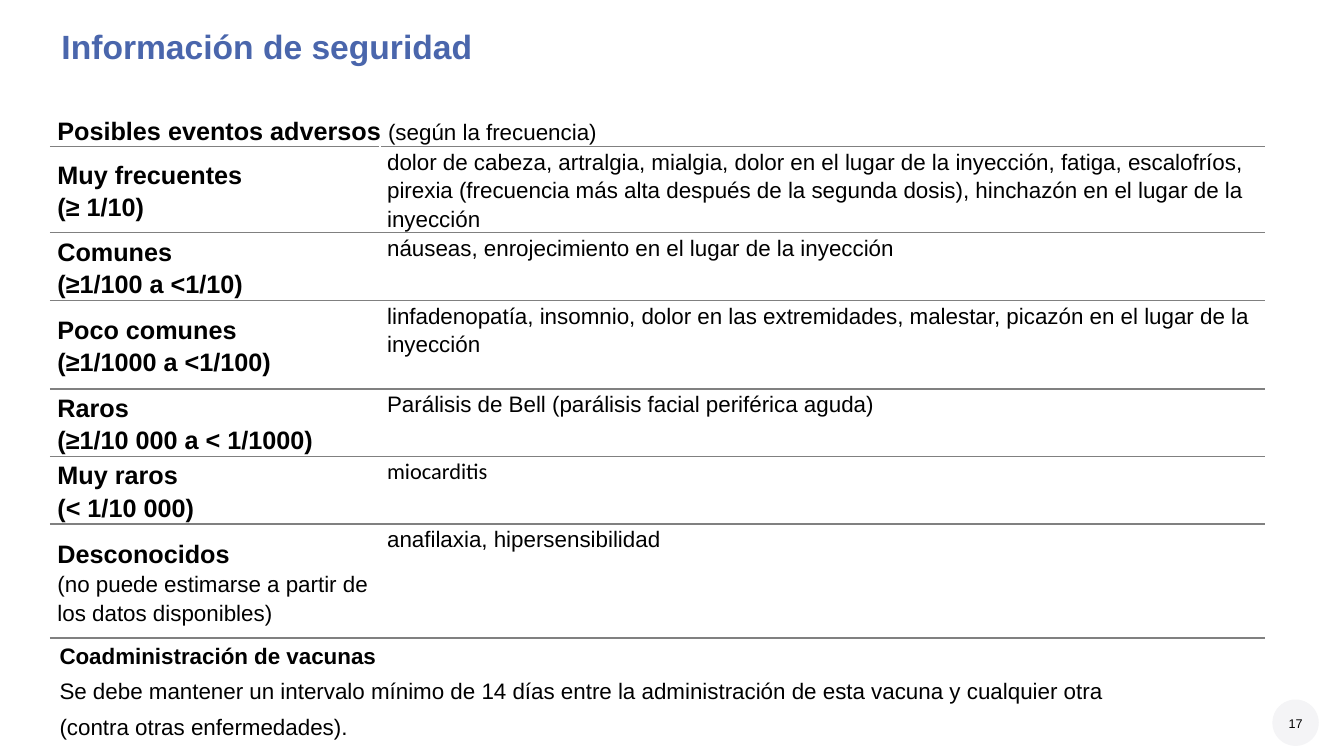
import pptx
import pptx.util
import pptx.dml.color
import pptx.enum.shapes
import pptx.enum.text
import pptx.oxml
import pptx.oxml.ns
from pptx.util import Inches

ANCHOR = pptx.enum.text.MSO_ANCHOR
ALIGN = pptx.enum.text.PP_ALIGN
LINE_PITCH = 1.28  # exact line height per point of text in the table

# Each row: bold label lines, plain label note, events, events font, row height
FREQUENCIES = [
    ("Muy frecuentes\n(≥ 1/10)", "",
     "dolor de cabeza, artralgia, mialgia, dolor en el lugar de la inyección, fatiga, "
     "escalofríos, pirexia (frecuencia más alta después de la segunda dosis), "
     "hinchazón en el lugar de la inyección", "Arial", 0.86),
    ("Comunes\n(≥1/100 a ˂1/10)", "",
     "náuseas, enrojecimiento en el lugar de la inyección", "Arial", 0.67),
    ("Poco comunes\n(≥1/1000 a ˂1/100)", "",
     "linfadenopatía, insomnio, dolor en las extremidades, malestar, "
     "picazón en el lugar de la inyección", "Arial", 0.88),
    ("Raros\n(≥1/10 000 a ˂ 1/1000)", "",
     "Parálisis de Bell (parálisis facial periférica aguda)", "Arial", 0.67),
    ("Muy raros\n(< 1/10 000)", "", "miocarditis", "Calibri", 0.67),
    ("Desconocidos", "(no puede estimarse a partir de los datos disponibles)",
     "anafilaxia, hipersensibilidad", "Arial", 1.13),
]


def rgb(value):
    return pptx.dml.color.RGBColor.from_string(value)


def format_font(font, size, bold=False, color="000000", name="Arial"):
    font.size = pptx.util.Pt(size)
    font.bold = bold
    font.name = name
    font.color.rgb = rgb(color)


def set_frame(tf, anchor=ANCHOR.TOP, wrap=True):
    tf.margin_left = tf.margin_right = tf.margin_top = tf.margin_bottom = 0
    tf.vertical_anchor = anchor
    tf.word_wrap = wrap


def set_borders(cell, top, bottom):
    tc_pr = cell._tc.get_or_add_tcPr()
    sides = [("lnL", "FFFFFF"), ("lnR", "FFFFFF"), ("lnT", top), ("lnB", bottom)]
    for i, (tag, color) in enumerate(sides):
        tc_pr.insert(i, pptx.oxml.parse_xml(
            f'<a:{tag} {pptx.oxml.ns.nsdecls("a")} w="12700"><a:solidFill>'
            f'<a:srgbClr val="{color}"/></a:solidFill></a:{tag}>'))


def format_cell(cell, anchor, top="808080"):
    cell.margin_left = cell.margin_right = Inches(0.07)
    cell.margin_top = cell.margin_bottom = 0
    cell.vertical_anchor = anchor
    cell.fill.background()
    set_borders(cell, top, "808080")
    for p in cell.text_frame.paragraphs:
        if p.runs:
            p.line_spacing = pptx.util.Pt(p.runs[0].font.size.pt * LINE_PITCH)


def add_title(s, x, y, w, h):
    title = s.shapes.title
    title.left, title.top, title.width, title.height = map(Inches, (x, y, w, h))
    tf = title.text_frame
    tf.text = "Información de seguridad"
    set_frame(tf)
    p = tf.paragraphs[0]
    p.alignment = ALIGN.LEFT
    format_font(p.runs[0].font, 24, True, "4A66AC")


def add_events_table(s, x, y, w):
    heights = [0.33] + [row[-1] for row in FREQUENCIES]
    label_w = 3.27
    frame = s.shapes.add_table(len(heights), 2, Inches(x), Inches(y),
                               Inches(w), Inches(sum(heights)))
    table = frame.table
    table.first_row = table.horz_banding = False
    table.columns[0].width = Inches(label_w)
    table.columns[1].width = Inches(w - label_w)
    for row, height in zip(table.rows, heights):
        row.height = Inches(height)

    # Heading across both columns
    head = table.cell(0, 0)
    head.merge(table.cell(0, 1))
    p = head.text_frame.paragraphs[0]
    for text, size, bold in [("Posibles eventos adversos ", 18, True),
                             ("(según la frecuencia)", 16, False)]:
        r = p.add_run()
        r.text = text
        format_font(r.font, size, bold)
    for cell in table.rows[0].cells:
        format_cell(cell, ANCHOR.MIDDLE, top="FFFFFF")

    # Frequency rows
    for i, (label, note, events, font_name, _) in enumerate(FREQUENCIES, 1):
        label_cell, events_cell = table.cell(i, 0), table.cell(i, 1)
        label_cell.text_frame.text = label
        for p in label_cell.text_frame.paragraphs:
            format_font(p.runs[0].font, 18, True)
        if note:
            p = label_cell.text_frame.add_paragraph()
            p.text = note
            format_font(p.runs[0].font, 16)
        events_cell.text_frame.text = events
        format_font(events_cell.text_frame.paragraphs[0].runs[0].font, 16, name=font_name)
        format_cell(label_cell, ANCHOR.MIDDLE)
        format_cell(events_cell, ANCHOR.TOP)


def add_coadministration(s, x, y, w, h):
    tf = s.shapes.add_textbox(*map(Inches, (x, y, w, h))).text_frame
    set_frame(tf, wrap=False)
    tf.text = ("Coadministración de vacunas\n"
               "Se debe mantener un intervalo mínimo de 14 días entre la "
               "administración de esta vacuna y cualquier otra\n"
               "(contra otras enfermedades).")
    for i, p in enumerate(tf.paragraphs):
        p.alignment = ALIGN.LEFT
        p.space_before = pptx.util.Pt(3 if i else 0)
        p.space_after = pptx.util.Pt(3)
        format_font(p.runs[0].font, 16, bold=i == 0)


def add_page_number(s, x, y, size):
    sp = s.shapes.add_shape(pptx.enum.shapes.MSO_SHAPE.OVAL,
                            *map(Inches, (x, y, size, size)))
    sp.shadow.inherit = False
    sp.fill.solid()
    sp.fill.fore_color.rgb = rgb("F4F4F6")
    sp.line.fill.background()
    box = s.shapes.add_textbox(*map(Inches, (x + 0.05, y + 0.16, size - 0.1, 0.15)))
    tf = box.text_frame
    set_frame(tf, ANCHOR.BOTTOM)
    tf.text = "17"
    p = tf.paragraphs[0]
    p.alignment = ALIGN.CENTER
    format_font(p.runs[0].font, 9)


def main():
    prs = pptx.Presentation()
    prs.slide_width, prs.slide_height = Inches(13.33), Inches(7.5)
    s = prs.slides.add_slide(prs.slide_layouts[5])
    add_page_number(s, 12.62, 6.94, 0.46)
    add_title(s, 0.61, 0.26, 12.12, 0.4)
    add_events_table(s, 0.5, 1.12, 12.04)
    add_coadministration(s, 0.59, 6.37, 12.12, 1)
    prs.save("out.pptx")


if __name__ == "__main__":
    main()
